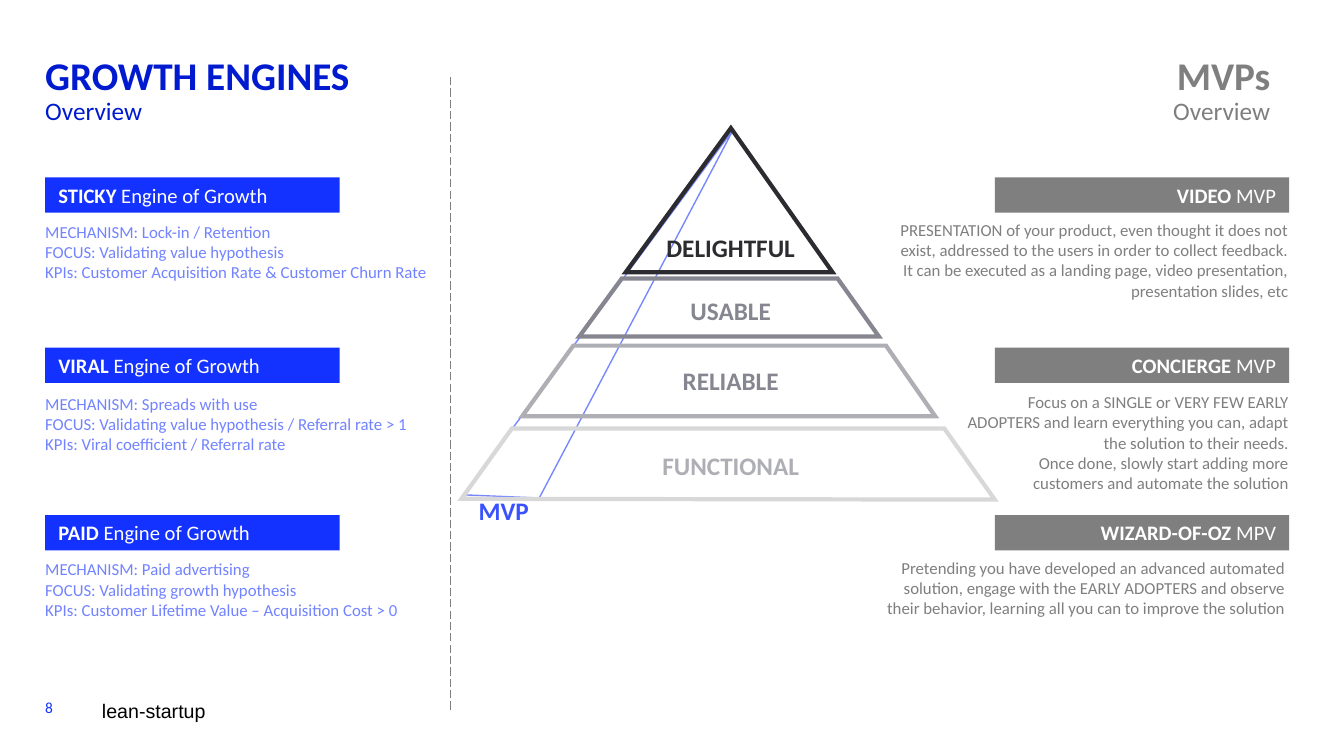
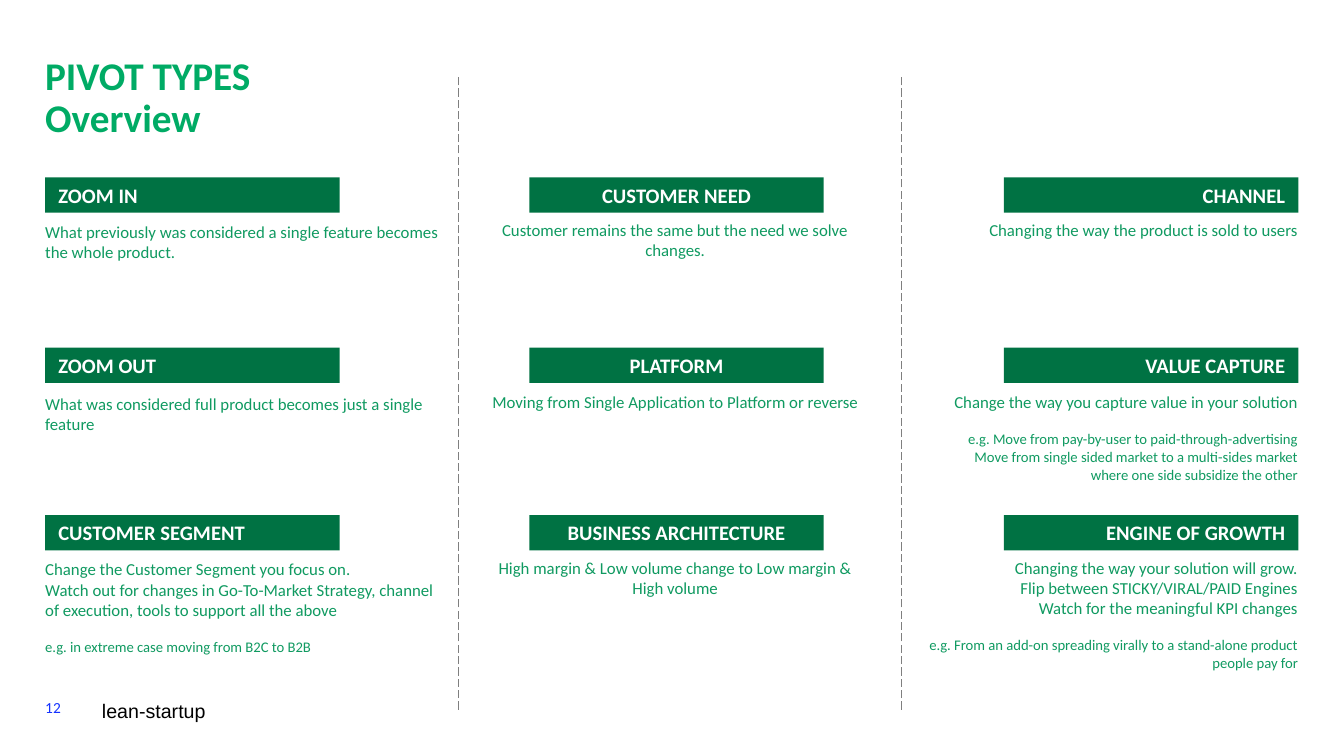
from lxml.etree import SubElement
from pptx import Presentation
from pptx.dml.color import RGBColor
from pptx.enum.dml import MSO_LINE
from pptx.enum.shapes import MSO_CONNECTOR, MSO_SHAPE
from pptx.enum.text import MSO_ANCHOR, PP_ALIGN
from pptx.oxml.ns import qn
from pptx.util import Cm, Pt

WHITE = RGBColor(0xFF, 0xFF, 0xFF)
BLACK = RGBColor(0x00, 0x00, 0x00)
GRAY = RGBColor(0x7F, 0x7F, 0x7F)
TITLE_BLUE = RGBColor(0x00, 0x1A, 0xD0)
BLUE = RGBColor(0x14, 0x32, 0xFF)
BODY_BLUE = RGBColor(0x72, 0x83, 0xFF)
WEDGE_BLUE = RGBColor(0x77, 0x88, 0xFF)
MVP_BLUE = RGBColor(0x39, 0x52, 0xFE)
TITLE_GREEN = RGBColor(0x00, 0xAB, 0x65)
GREEN = RGBColor(0x00, 0x72, 0x43)
BODY_GREEN = RGBColor(0x10, 0x9A, 0x61)
CHARCOAL = RGBColor(0x2C, 0x2C, 0x30)
SLATE = RGBColor(0x86, 0x86, 0x90)
SILVER = RGBColor(0xAE, 0xAE, 0xB5)
PALE = RGBColor(0xD8, 0xD8, 0xD8)

LEFT, CENTER, RIGHT = PP_ALIGN.LEFT, PP_ALIGN.CENTER, PP_ALIGN.RIGHT
MARGIN = 1.14
BAR_WIDTH, BAR_HEIGHT = 7.42, 0.89
ROWS = [(4.47, 5.54), (8.76, 9.88), (12.98, 14.05)]  # bar top, body top


def add_text(slide, box, paragraphs, align=LEFT, anchor=MSO_ANCHOR.TOP,
             bar_color=None, font="Calibri"):
    """Write paragraphs of (text, size, color, bold) runs, on a bar if colored."""
    box = [Cm(length) for length in box]
    if bar_color is None:
        shape = slide.shapes.add_textbox(*box)
        inset_x = inset_y = 0
    else:
        shape = slide.shapes.add_shape(MSO_SHAPE.RECTANGLE, *box)
        shape.shadow.inherit = False
        shape.fill.solid()
        shape.fill.fore_color.rgb = bar_color
        shape.line.fill.background()
        inset_x, inset_y = Cm(0.33), Cm(0.18)
    frame = shape.text_frame
    frame.word_wrap = True
    frame.vertical_anchor = anchor
    frame.margin_left = frame.margin_right = inset_x
    frame.margin_top = frame.margin_bottom = inset_y
    for index, runs in enumerate(paragraphs):
        paragraph = frame.add_paragraph() if index else frame.paragraphs[0]
        paragraph.alignment = align
        for text, size, color, bold in runs:
            run = paragraph.add_run()
            run.text = text
            run.font.name = font
            run.font.size = Pt(size)
            run.font.color.rgb = color
            run.font.bold = bold
    return frame


def add_outline(slide, points, color, width, fill=None):
    """Draw a closed polygon with sharp corners."""
    start, *rest = [(Cm(x), Cm(y)) for x, y in points]
    builder = slide.shapes.build_freeform(*start)
    builder.add_line_segments(rest, close=True)
    shape = builder.convert_to_shape()
    shape.shadow.inherit = False
    if fill is None:
        shape.fill.background()
    else:
        shape.fill.solid()
        shape.fill.fore_color.rgb = fill
    shape.line.color.rgb = color
    shape.line.width = Pt(width)
    SubElement(shape.line._get_or_add_ln(), qn("a:miter"), lim="800000")


# Titles: left, width, alignment, color, second line size and weight
# Columns: alignment, bar left, bar color, body color, entries
# Entries: bold heading, plain heading, body left, body width, lines, examples
PAGES = [
    {
        "number": "8",
        "titles": [
            ("GROWTH ENGINES", MARGIN, 9.93, LEFT, TITLE_BLUE, 18, False),
            ("MVPs", 22.43, 9.58, RIGHT, GRAY, 18, False),
        ],
        "dividers": [11.35],
        "columns": [
            (LEFT, MARGIN, BLUE, BODY_BLUE, [
                ("STICKY", " Engine of Growth", MARGIN, 9.93, [
                    "MECHANISM: Lock-in / Retention",
                    "FOCUS: Validating value hypothesis",
                    "KPIs: Customer Acquisition Rate & Customer Churn Rate"], []),
                ("VIRAL", " Engine of Growth", MARGIN, 9.93, [
                    "MECHANISM: Spreads with use",
                    "FOCUS: Validating value hypothesis / Referral rate > 1",
                    "KPIs: Viral coefficient / Referral rate"], []),
                ("PAID", " Engine of Growth", MARGIN, 9.93, [
                    "MECHANISM: Paid advertising",
                    "FOCUS: Validating growth hypothesis",
                    "KPIs: Customer Lifetime Value – Acquisition Cost > 0"], []),
            ]),
            (RIGHT, 25.07, GRAY, GRAY, [
                ("VIDEO", " MVP", 22.28, 10.19, [
                    "PRESENTATION of your product, even thought it does not exist, "
                    "addressed to the users in order to collect feedback.",
                    "It can be executed as a landing page, video presentation, "
                    "presentation slides, etc"], []),
                ("CONCIERGE", " MVP", 24.38, 8.1, [
                    "Focus on a SINGLE or VERY FEW EARLY ADOPTERS and learn "
                    "everything you can, adapt the solution to their needs.",
                    "Once done, slowly start adding more customers and automate "
                    "the solution"], []),
                ("WIZARD-OF-OZ", " MPV", 21.87, 10.52, [
                    "Pretending you have developed an advanced automated solution, "
                    "engage with the EARLY ADOPTERS and observe their behavior, "
                    "learning all you can to improve the solution"], []),
            ]),
        ],
    },
    {
        "number": "12",
        "titles": [("PIVOT TYPES", MARGIN, 9.93, LEFT, TITLE_GREEN, 28, True)],
        "dividers": [11.56, 22.71],
        "columns": [
            (LEFT, MARGIN, GREEN, BODY_GREEN, [
                ("ZOOM IN", "", MARGIN, 9.93, [
                    "What previously was considered a single feature becomes "
                    "the whole product."], []),
                ("ZOOM OUT", "", MARGIN, 9.93, [
                    "What was considered full product becomes just a single "
                    "feature"], []),
                ("CUSTOMER SEGMENT", "", MARGIN, 9.93, [
                    "Change the Customer Segment you focus on.",
                    "Watch out for changes in Go-To-Market Strategy, channel of "
                    "execution, tools to support all the above"],
                    ["e.g. in extreme case moving from B2C to B2B"]),
            ]),
            (CENTER, 13.34, GREEN, BODY_GREEN, [
                ("CUSTOMER NEED", "", 12.42, 9.19, [
                    "Customer remains the same but the need we solve changes."], []),
                ("PLATFORM", "", 11.76, 10.52, [
                    "Moving from Single Application to Platform or reverse"], []),
                ("BUSINESS ARCHITECTURE", "", 12.14, 9.75, [
                    "High margin & Low volume change to Low margin & High volume"],
                    []),
            ]),
            (RIGHT, 25.3, GREEN, BODY_GREEN, [
                ("CHANNEL", "", 23.11, 9.6, [
                    "Changing the way the product is sold to users"], []),
                ("VALUE CAPTURE", "", 23.11, 9.6, [
                    "Change the way you capture value in your solution"], [
                    "e.g. Move from pay-by-user to paid-through-advertising",
                    "Move from single sided market to a multi-sides market",
                    "where one side subsidize the other"]),
                ("ENGINE OF GROWTH", "", 23.11, 9.6, [
                    "Changing the way your solution will grow.",
                    "Flip between STICKY/VIRAL/PAID Engines",
                    "Watch for the meaningful KPI changes"], [
                    "e.g. From an add-on spreading virally to a stand-alone "
                    "product people pay for"]),
            ]),
        ],
    },
]

# Tier: label, label top, label color, outline color, corners
TIERS = [
    ("DELIGHTFUL", 5.82, CHARCOAL, CHARCOAL,
     [(15.77, 6.86), (18.42, 3.23), (20.98, 6.86)]),
    ("USABLE", 7.42, SLATE, SLATE,
     [(15.67, 7.02), (21.11, 7.02), (22.15, 8.48), (14.6, 8.48)]),
    ("RELIABLE", 9.17, SLATE, SILVER,
     [(14.45, 8.71), (22.33, 8.71), (23.57, 10.49), (13.16, 10.49)]),
    ("FUNCTIONAL", 11.33, SILVER, PALE,
     [(12.9, 10.8), (23.8, 10.8), (25.07, 12.59), (11.63, 12.57)]),
]

prs = Presentation()
prs.slide_width = Cm(33.87)
prs.slide_height = Cm(19.05)

for page in PAGES:
    slide = prs.slides.add_slide(prs.slide_layouts[6])

    for heading, left, width, align, color, size, bold in page["titles"]:
        title = add_text(slide, (left, 1.42, width, 2.16),
                         [[(heading, 28, color, True)],
                          [("Overview", size, color, bold)]], align)
        for paragraph in title.paragraphs:
            paragraph.line_spacing = 0.9

    for x in page["dividers"]:
        divider = slide.shapes.add_connector(
            MSO_CONNECTOR.STRAIGHT, Cm(x), Cm(17.88), Cm(x), Cm(1.95))
        divider.line.color.rgb = GRAY
        divider.line.width = Pt(0.75)
        divider.line.dash_style = MSO_LINE.LONG_DASH
        SubElement(divider._element.spPr, qn("a:effectLst"))

    for align, bar_left, bar_color, body_color, entries in page["columns"]:
        drop = 0.04 if align == LEFT else 0
        for (bar_top, body_top), entry in zip(ROWS, entries):
            strong, plain, left, width, lines, examples = entry
            heading = [(strong, 14.7, WHITE, True)]
            if plain:
                heading.append((plain, 14.7, WHITE, False))
            add_text(slide, (bar_left, bar_top, BAR_WIDTH, BAR_HEIGHT), [heading],
                     align, MSO_ANCHOR.MIDDLE, bar_color)
            body = add_text(slide, (left, body_top + drop, width, 2.9),
                            [[(line, 12, body_color, False)] for line in lines]
                            + [[(line, 10.5, body_color, False)] for line in examples],
                            align)
            if examples:
                body.paragraphs[len(lines)].space_before = Pt(12.8)

    add_text(slide, (2.57, 17.6, 10.08, 0.76),
             [[("lean-startup", 14, BLACK, False)]], font="Arial")
    add_text(slide, (MARGIN, 17.6, 1.4, 0.76),
             [[(page["number"], 11, BLUE, False)]])

growth_slide = prs.slides[0]
add_outline(growth_slide, [(18.49, 3.25), (11.68, 12.47), (13.59, 12.55)],
            WEDGE_BLUE, 1, WHITE)
for label, label_top, label_color, outline_color, corners in TIERS:
    add_outline(growth_slide, corners, outline_color, 3)
    add_text(growth_slide, (15.9, label_top, 5.03, 0.81),
             [[(label, 18, label_color, True)]], CENTER, MSO_ANCHOR.MIDDLE)
add_text(growth_slide, (11.63, 12.47, 2.13, 0.81),
         [[("MVP", 18, MVP_BLUE, True)]], CENTER, MSO_ANCHOR.MIDDLE)

prs.save("out.pptx")
